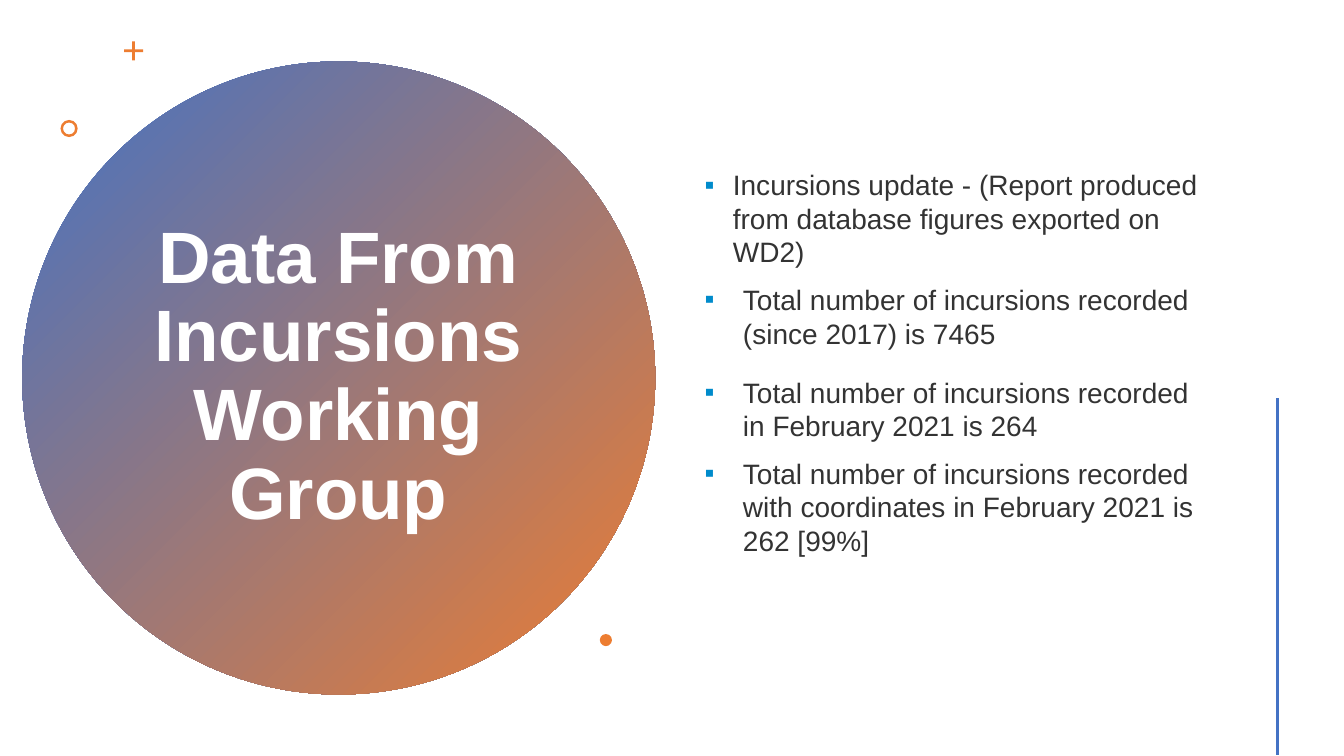
from lxml import etree
from pptx import Presentation, util as u
from pptx.dml.color import RGBColor
from pptx.enum import shapes, text
from pptx.oxml.ns import qn

WIDTH, HEIGHT = u.Inches(13.33), u.Inches(7.5)
BLUE = RGBColor(0x44, 0x72, 0xC4)
ORANGE = RGBColor(0xED, 0x7D, 0x31)
WHITE = RGBColor(0xFF, 0xFF, 0xFF)
DARK_GREY = RGBColor(0x33, 0x33, 0x33)
BULLET_BLUE = "008BCB"
FONT = "Arial"

HEADING = "Data From Incursions Working Group"
# Wording, indent in inches, space after in points
FINDINGS = [
    ("Incursions update - (Report produced from database figures exported on WD2)", 0.28, 0),
    ("Total number of incursions recorded (since 2017) is 7465", 0.38, 8),
    ("Total number of incursions recorded in February 2021 is 264", 0.38, 0),
    ("Total number of incursions recorded with coordinates in February 2021 is 262 [99%]", 0.38, 0),
]


def across(percent):
    return round(WIDTH * percent / 100)


def down(percent):
    return round(HEIGHT * percent / 100)


def area(left, top, width, height):
    """Turn percentages of the slide into a left, top, width, height box."""
    return across(left), down(top), across(width), down(height)


def add_ornament(slide, kind, box, adjustment=None):
    ornament = slide.shapes.add_shape(kind, *box)
    ornament.shadow.inherit = False
    ornament.line.fill.background()
    ornament.fill.solid()
    ornament.fill.fore_color.rgb = ORANGE
    if adjustment is not None:
        ornament.adjustments[0] = adjustment
    return ornament


def add_heading_disc(slide, box):
    """Add the gradient disc behind the placeholders."""
    disc = add_ornament(slide, shapes.MSO_SHAPE.OVAL, box)
    disc.fill.gradient()
    disc.fill.gradient_angle = 315
    for stop, position, color in zip(disc.fill.gradient_stops, (0, 1), (BLUE, ORANGE)):
        stop.position = position
        stop.color.rgb = color
    slide.shapes.element.insert(2, disc.element)


def place(placeholder, box):
    """Move a placeholder and return its text frame, centred vertically."""
    placeholder.left, placeholder.top, placeholder.width, placeholder.height = box
    frame = placeholder.text_frame
    frame.word_wrap = True
    frame.auto_size = text.MSO_AUTO_SIZE.NONE
    frame.vertical_anchor = text.MSO_ANCHOR.MIDDLE
    return frame


def add_run(paragraph, wording, size, color, bold=False):
    run = paragraph.add_run()
    run.text = wording
    run.font.name = FONT
    run.font.size = u.Pt(size)
    run.font.bold = bold
    run.font.color.rgb = color


def set_bullet(paragraph, indent):
    properties = paragraph._p.get_or_add_pPr()
    properties.set("marL", str(u.Inches(indent)))
    properties.set("indent", str(-u.Inches(indent)))
    bullet_color = etree.SubElement(properties, qn("a:buClr"))
    etree.SubElement(bullet_color, qn("a:srgbClr"), val=BULLET_BLUE)
    etree.SubElement(properties, qn("a:buFont"), typeface=FONT)
    etree.SubElement(properties, qn("a:buChar"), char="▪")


def fill_heading(slide, box):
    paragraph = place(slide.shapes.title, box).paragraphs[0]
    paragraph.alignment = text.PP_ALIGN.CENTER
    paragraph.line_spacing = 0.9
    add_run(paragraph, HEADING, 52, WHITE, bold=True)


def fill_findings(slide, box):
    frame = place(slide.placeholders[1], box)
    frame.margin_top, frame.margin_bottom = u.Inches(0.19), u.Inches(0.52)
    for index, (wording, indent, space_after) in enumerate(FINDINGS):
        paragraph = frame.add_paragraph() if index else frame.paragraphs[0]
        set_bullet(paragraph, indent)
        paragraph.space_before = u.Pt(10 if index else 0)
        paragraph.space_after = u.Pt(space_after)
        add_run(paragraph, wording, 20, DARK_GREY)


def add_side_rule(slide, x, top, bottom):
    rule = slide.shapes.add_connector(
        shapes.MSO_CONNECTOR.STRAIGHT, across(x), down(top), across(x), down(bottom))
    rule.line.color.rgb = BLUE
    rule.line.width = u.Pt(2)
    etree.SubElement(rule.element.spPr, qn("a:effectLst"))


def main():
    deck = Presentation()
    deck.slide_width, deck.slide_height = WIDTH, HEIGHT
    slide = deck.slides.add_slide(deck.slide_layouts[1])

    add_heading_disc(slide, area(1.65, 8.13, 47.1, 83.73))
    fill_heading(slide, area(10.2, 18.8, 29.93, 62.27))
    fill_findings(slide, area(51.68, 7.6, 39.15, 85.07))
    add_ornament(slide, shapes.MSO_SHAPE.CROSS, area(9.23, 5.47, 1.42, 2.53), 0.43)
    add_ornament(slide, shapes.MSO_SHAPE.DONUT, area(4.5, 15.87, 1.28, 2.27), 0.15)
    add_ornament(slide, shapes.MSO_SHAPE.OVAL, area(44.63, 83.87, 0.9, 1.6))
    add_side_rule(slide, 95.03, 52.67, 99.87)

    deck.save("out.pptx")


if __name__ == "__main__":
    main()
